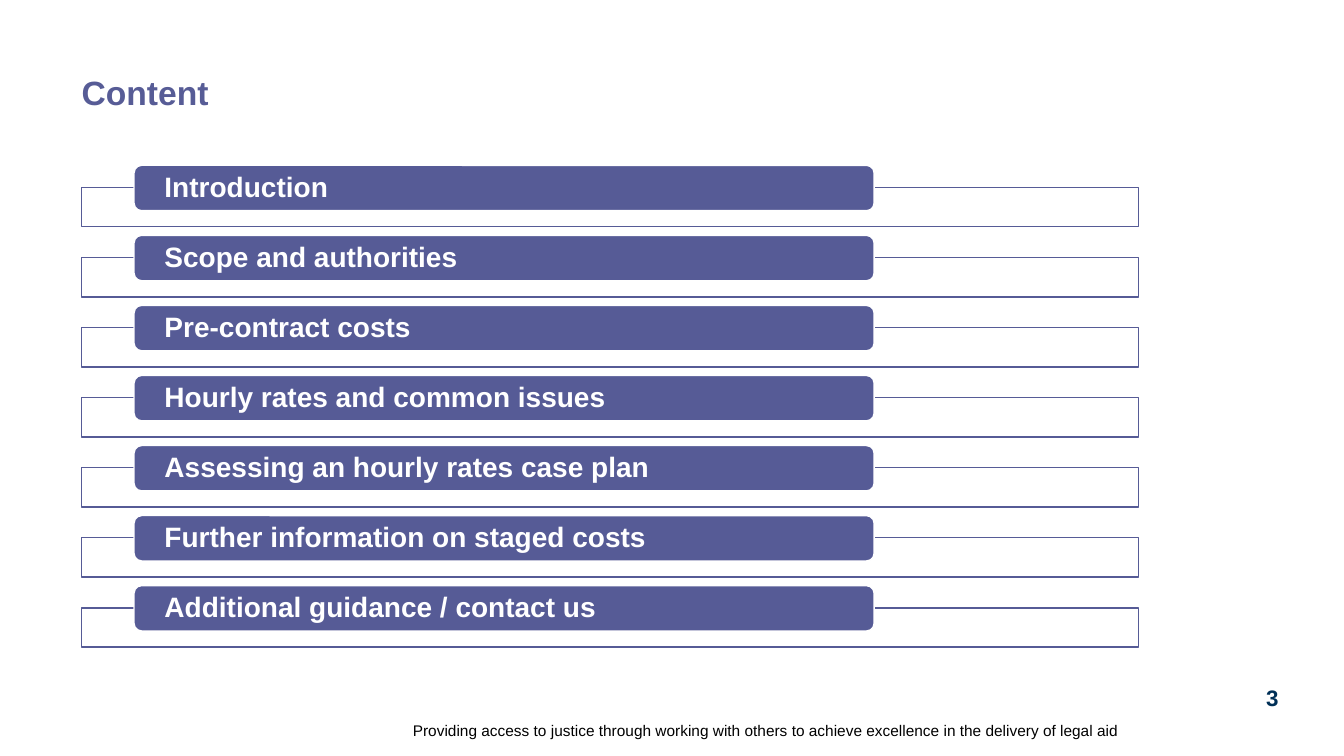
from dataclasses import dataclass

from lxml.etree import SubElement
from pptx import Presentation
from pptx.dml.color import RGBColor
from pptx.enum.shapes import MSO_SHAPE as Preset
from pptx.enum.text import MSO_ANCHOR as Anchor, PP_ALIGN as Align
from pptx.oxml.ns import qn
from pptx.shapes.autoshape import Shape
from pptx.slide import Slide
from pptx.util import Inches, Pt


@dataclass(frozen=True)
class Theme:
    font: str = "Arial"
    title: str = "575C96"
    accent: str = "565B96"
    white: str = "FFFFFF"
    navy: str = "003057"
    black: str = "000000"
    title_size: int = 24
    topic_size: int = 20
    number_size: int = 16
    footer_size: int = 11


@dataclass(frozen=True)
class Box:
    left: float
    top: float
    width: float
    height: float

    def lengths(self) -> tuple:
        return tuple(Inches(v) for v in (self.left, self.top, self.width, self.height))


@dataclass(frozen=True)
class Topic:
    label: str
    top: float


THEME = Theme()
FIRST_TOP, PITCH = 1.64, 0.695
LABELS = (
    "Introduction",
    "Scope and authorities",
    "Pre-contract costs",
    "Hourly rates and common issues",
    "Assessing an hourly rates case plan",
    "Further information on staged costs",
    "Additional guidance / contact us",
)
TOPICS = [Topic(label, FIRST_TOP + row * PITCH) for row, label in enumerate(LABELS)]


def write(shape: Shape, text: str, *, size: int, color: str, bold: bool = True,
          align: Align = Align.LEFT, anchor: Anchor = Anchor.TOP,
          inset: float = 0, spacing: float = 1.0) -> None:
    frame = shape.text_frame
    frame.word_wrap = True
    frame.vertical_anchor = anchor
    frame.margin_left = frame.margin_right = Inches(inset)
    frame.margin_top = frame.margin_bottom = 0
    paragraph = frame.paragraphs[0]
    paragraph.alignment = align
    paragraph.line_spacing = spacing
    run = paragraph.add_run()
    run.text = text
    run.font.name = THEME.font
    run.font.size = Pt(size)
    run.font.bold = bold
    run.font.color.rgb = RGBColor.from_string(color)


def add_panel(slide: Slide, preset: Preset, box: Box, fill: str, line: str) -> Shape:
    panel = slide.shapes.add_shape(preset, *box.lengths())
    panel.shadow.inherit = False
    panel.fill.solid()
    panel.fill.fore_color.rgb = RGBColor.from_string(fill)
    panel.line.color.rgb = RGBColor.from_string(line)
    panel.line.width = Pt(1)
    return panel


def set_opacity(panel: Shape, percent: int) -> None:
    color = panel.fill._xPr.find(qn("a:solidFill"))[0]
    SubElement(color, qn("a:alpha"), val=str(percent * 1000))


def add_topic(slide: Slide, topic: Topic) -> None:
    outline = add_panel(slide, Preset.RECTANGLE, Box(0.81, topic.top + 0.22, 10.48, 0.39),
                        THEME.white, THEME.accent)
    set_opacity(outline, 90)
    pill = add_panel(slide, Preset.ROUNDED_RECTANGLE, Box(1.33, topic.top, 7.34, 0.45),
                     THEME.accent, THEME.white)
    write(pill, topic.label, size=THEME.topic_size, color=THEME.white,
          anchor=Anchor.MIDDLE, inset=0.28, spacing=0.9)


def main() -> None:
    deck = Presentation()
    deck.slide_width, deck.slide_height = Inches(13.33), Inches(7.5)
    slide = deck.slides.add_slide(deck.slide_layouts[5])

    title = slide.shapes.title
    title.left, title.top, title.width, title.height = Box(0.81, 0.76, 8.44, 0.38).lengths()
    write(title, "Content", size=THEME.title_size, color=THEME.title, spacing=0.9)

    for topic in TOPICS:
        add_topic(slide, topic)

    page_number = slide.shapes.add_textbox(*Box(12.47, 6.79, 0.3, 0.28).lengths())
    write(page_number, "3", size=THEME.number_size, color=THEME.navy, align=Align.CENTER)

    footer = slide.shapes.add_textbox(*Box(3.22, 7.14, 7.88, 0.2).lengths())
    write(footer, "Providing access to justice through working with others "
                  "to achieve excellence in the delivery of legal aid",
          size=THEME.footer_size, color=THEME.black, bold=False,
          align=Align.RIGHT, anchor=Anchor.BOTTOM)

    deck.save("out.pptx")


if __name__ == "__main__":
    main()
